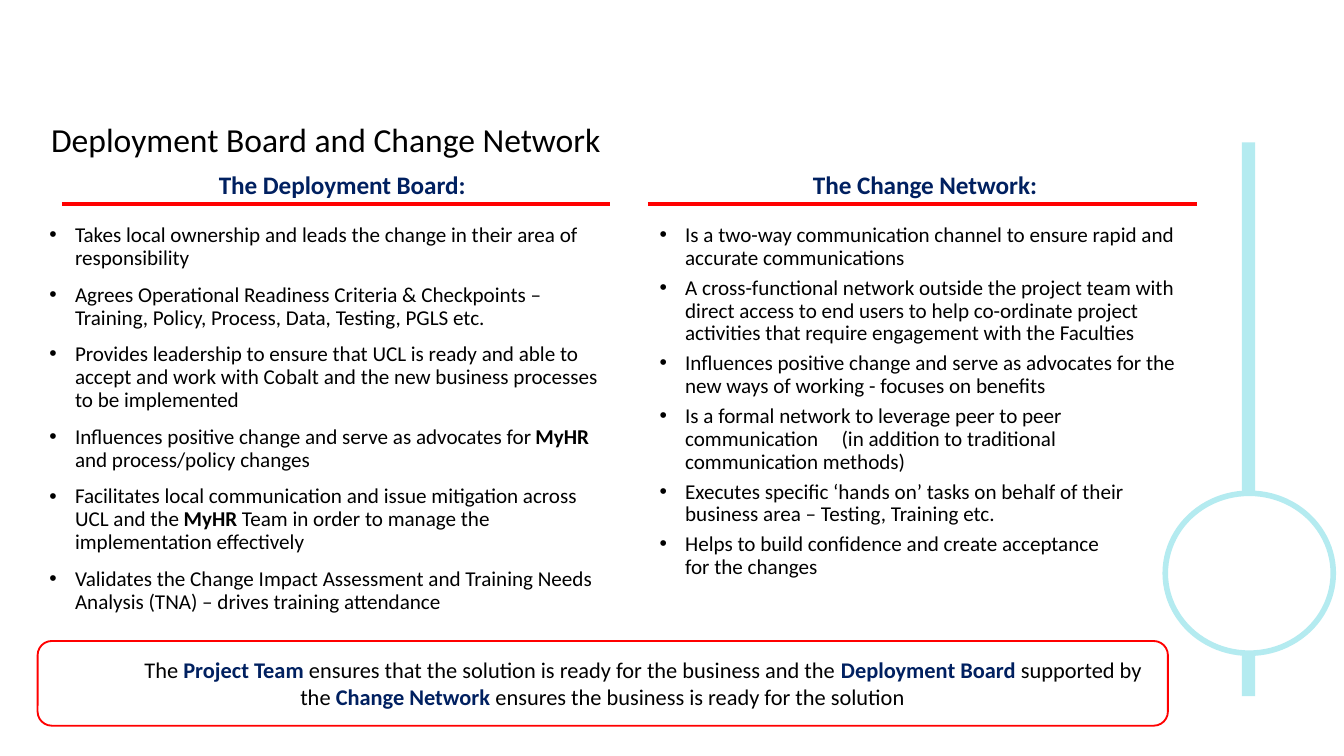
from lxml import etree
from pptx import Presentation
from pptx.dml.color import RGBColor
from pptx.enum.shapes import MSO_CONNECTOR, MSO_SHAPE
from pptx.enum.text import MSO_ANCHOR, MSO_AUTO_SIZE, PP_ALIGN
from pptx.oxml.ns import qn
from pptx.util import Inches, Pt

RECTANGLE, OVAL, ROUNDED = MSO_SHAPE.RECTANGLE, MSO_SHAPE.OVAL, MSO_SHAPE.ROUNDED_RECTANGLE
STRAIGHT = MSO_CONNECTOR.STRAIGHT
LEFT, CENTER = PP_ALIGN.LEFT, PP_ALIGN.CENTER
TOP, MIDDLE = MSO_ANCHOR.TOP, MSO_ANCHOR.MIDDLE
NO_FIT = MSO_AUTO_SIZE.NONE

BLACK = RGBColor(0x00, 0x00, 0x00)
WHITE = RGBColor(0xFF, 0xFF, 0xFF)
NAVY = RGBColor(0x00, 0x20, 0x60)
RED = RGBColor(0xFF, 0x00, 0x00)
AQUA = RGBColor(0xB4, 0xEB, 0xF0)

# Content: a paragraph is a list of (text, style) spans
TITLE = "Deployment Board and Change Network"

BOARD = [
    [("Takes local ownership and leads the change in their area of responsibility", "plain")],
    [("Agrees Operational Readiness Criteria & Checkpoints – Training, Policy, Process, "
      "Data, Testing, PGLS etc.", "plain")],
    [("Provides leadership to ensure that UCL is ready and able to accept and work with "
      "Cobalt and the new business processes to be implemented", "plain")],
    [("Influences positive change and serve as advocates for ", "plain"), ("MyHR", "bold"),
     (" and process/policy changes", "plain")],
    [("Facilitates local communication and issue mitigation across UCL and the ", "plain"),
     ("MyHR", "bold"),
     (" Team in order to manage the implementation effectively", "plain")],
    [("Validates the Change Impact Assessment and Training Needs Analysis (TNA) – drives "
      "training attendance", "plain")],
]
NETWORK = [
    [("Is a two-way communication channel to ensure rapid and accurate communications", "plain")],
    [("A cross-functional network outside the project team with direct access to end users to "
      "help co-ordinate project activities that require engagement with the Faculties", "plain")],
    [("Influences positive change and serve as advocates for the new ways of working - "
      "focuses on benefits", "plain")],
    [("Is a formal network to leverage peer to peer communication", "plain"), (" ", "wide"),
     ("(in addition to traditional communication methods)", "plain")],
    [("Executes specific ‘hands on’ tasks on behalf of their business area – Testing, "
      "Training etc.", "plain")],
    [("Helps to build confidence and create acceptance\vfor the changes", "plain")],
]
SUMMARY = [
    ("The ", "plain"), ("Project Team ", "key"),
    ("ensures that the solution is ready for the business and the ", "plain"),
    ("Deployment Board ", "key"), ("supported by the ", "plain"),
    ("Change Network ", "key"), ("ensures the business is ready for the solution", "plain"),
]
COLUMNS = [
    {"heading": "The Deployment Board:", "heading_at": (1.53, 1.21, 2.06, 0.33),
     "rule": (0.46, 4.54), "items": BOARD, "body_at": (0.27, 1.62, 4.33, 2.91),
     "indent": 0.19, "gap": 7.5},
    {"heading": "The Change Network:", "heading_at": (5.95, 1.21, 1.89, 0.33),
     "rule": (4.82, 8.91), "items": NETWORK, "body_at": (4.77, 1.62, 4.2, 2.91),
     "indent": 0.23, "gap": 3.8},
]
PAGE_WIDTH = 10
RULE_Y = 1.52
HANGING = 0.19
STYLES = {
    "plain": {"bold": False, "color": BLACK},
    "bold": {"bold": True, "color": BLACK},
    "key": {"bold": True, "color": NAVY},
    "wide": {"bold": False, "color": BLACK, "spacing": 10},
}


def inches(values):
    return [Inches(value) for value in values]


def write(para, spans, size, **layout):
    for name, value in layout.items():
        setattr(para, name, value)
    for text, style in spans:
        look = STYLES[style]
        for number, piece in enumerate(text.split("\v")):
            if number:
                para.add_line_break()
            span = para.add_run()
            span.text = piece
            for name, value in {"name": "Calibri", "size": Pt(size), "bold": look["bold"]}.items():
                setattr(span.font, name, value)
            span.font.color.rgb = look["color"]
            if "spacing" in look:
                span.font._element.set("spc", str(look["spacing"] * 100))


def add_bullet(para, indent):
    properties = para._p.get_or_add_pPr()
    properties.set("marL", str(Inches(indent)))
    properties.set("indent", str(-Inches(HANGING)))
    etree.SubElement(properties, qn("a:buFont")).set("typeface", "Arial")
    etree.SubElement(properties, qn("a:buChar")).set("char", "•")


def add_text_box(page, at, wrap):
    frame = page.shapes.add_textbox(*inches(at)).text_frame
    frame.word_wrap = wrap
    frame.vertical_anchor = TOP
    return frame


def add_shape(page, kind, at, fill=None, line=None, width=0):
    shape = page.shapes.add_shape(kind, *inches(at))
    shape.shadow.inherit = False
    for paint, color in ((shape.fill, fill), (shape.line.fill, line)):
        if color is None:
            paint.background()
        else:
            paint.solid()
            paint.fore_color.rgb = color
    if line is not None:
        shape.line.width = Pt(width)
    return shape


def add_rule(page, start, end):
    rule = page.shapes.add_connector(STRAIGHT, *inches((start, RULE_Y, end, RULE_Y)))
    rule.line.color.rgb = RED
    rule.line.width = Pt(2.25)
    etree.SubElement(rule._element.spPr, qn("a:effectLst"))


def add_column(page, column):
    heading = add_text_box(page, column["heading_at"], False)
    write(heading.paragraphs[0], [(column["heading"], "key")], 13.5)
    add_rule(page, *column["rule"])
    body = add_text_box(page, column["body_at"], True)
    for number, spans in enumerate(column["items"]):
        para = body.add_paragraph() if number else body.paragraphs[0]
        add_bullet(para, column["indent"])
        write(para, spans, 11.3, line_spacing=0.9,
              space_before=Pt(column["gap"] if number else 0))


def main():
    # Widescreen page, 16:9
    deck = Presentation()
    deck.slide_width, deck.slide_height = inches((PAGE_WIDTH, PAGE_WIDTH * 9 / 16))
    page = deck.slides.add_slide(deck.slide_layouts[5])

    # Rail and ring at the right edge
    add_shape(page, RECTANGLE, (9.24, 1.06, 0.1, 4.12), fill=AQUA)
    add_shape(page, OVAL, (8.67, 3.67, 1.25, 1.19), fill=WHITE, line=AQUA, width=3)

    # Title
    title = page.shapes.title
    title.left, title.top, title.width, title.height = inches((0.28, 0.84, 8.62, 0.42))
    frame = title.text_frame
    frame.auto_size = NO_FIT
    frame.vertical_anchor = MIDDLE
    write(frame.paragraphs[0], [(TITLE, "plain")], 18, alignment=LEFT, line_spacing=0.9)

    # Two columns
    for column in COLUMNS:
        add_column(page, column)

    # Summary banner, first line indented
    banner = add_shape(page, ROUNDED, (0.28, 4.77, 8.41, 0.63), line=RED, width=1)
    banner.text_frame.word_wrap = True
    banner.text_frame.vertical_anchor = MIDDLE
    para = banner.text_frame.paragraphs[0]
    para._p.get_or_add_pPr().set("indent", str(Inches(0.6)))
    write(para, SUMMARY, 12, alignment=CENTER)

    deck.save("out.pptx")


if __name__ == "__main__":
    main()
